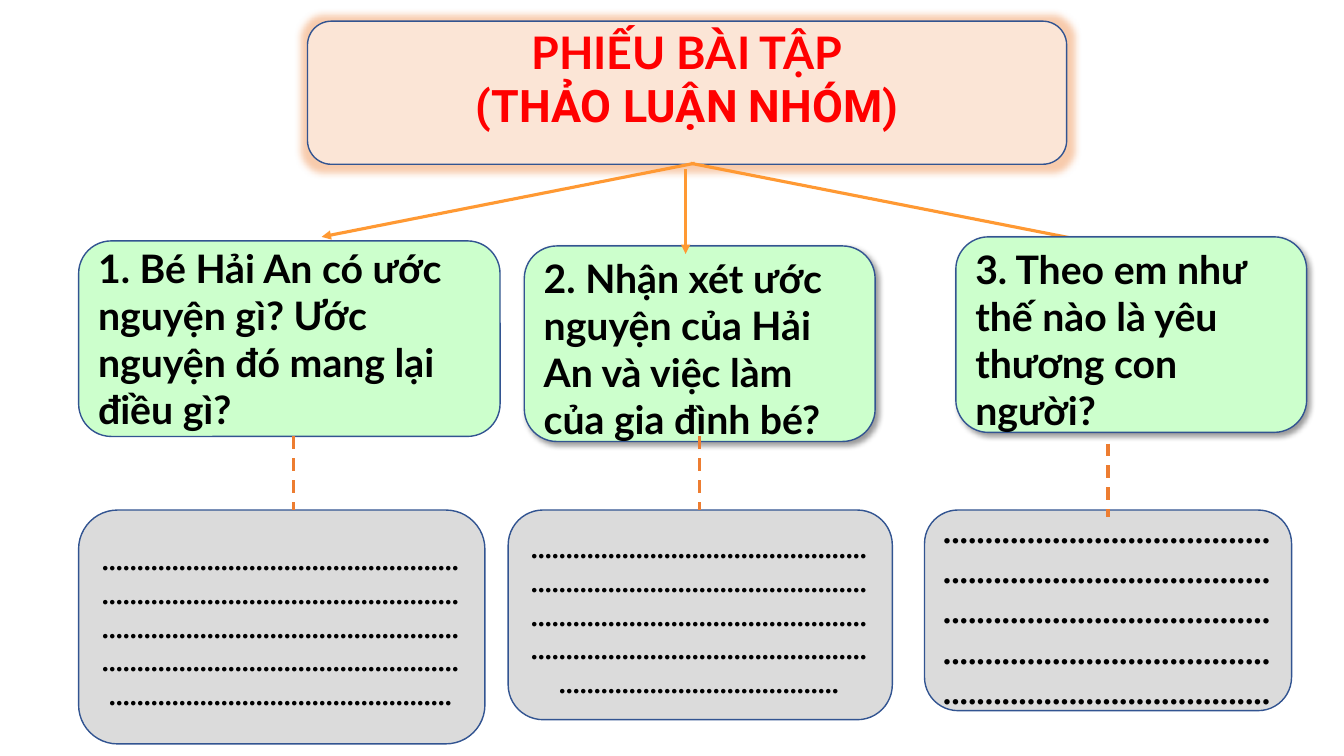
from lxml.etree import SubElement
from pptx import Presentation
from pptx.dml.color import RGBColor
from pptx.enum.dml import MSO_LINE
from pptx.enum.shapes import MSO_CONNECTOR, MSO_SHAPE
from pptx.enum.text import MSO_ANCHOR, MSO_AUTO_SIZE, PP_ALIGN
from pptx.oxml.ns import qn
from pptx.util import Inches, Pt

BORDER, GREEN, GRAY, PEACH = "325491", "CCFFCC", "DBDBDB", "FBE5D6"
ARROW, DASH, RED, BLACK = "FF9933", "ED7D31", "FF0000", "000000"

HEADING = (3.05, 0.21, 7.53, 1.42)
# left, top, width, height, top inset, bottom inset, has shadow, text
QUESTIONS = [
    (0.78, 2.39, 4.18, 1.94, 0.05, 0.05, False,
     "1. Bé Hải An có ước nguyện gì? Ước nguyện đó mang lại điều gì?"),
    (5.2, 2.44, 3.48, 1.94, 0.09, 0, True,
     "2. Nhận xét ước nguyện của Hải An và việc làm của gia đình bé?"),
    (9.48, 2.35, 3.48, 1.94, 0.09, 0, True,
     "3. Theo em như thế nào là yêu thương con người?"),
]
# left, width, height, side inset, number of dots, text size
ANSWERS = [(0.78, 4.03, 2.32, 0.1, 253, 20),
           (5.04, 3.81, 2.08, 0.11, 232, 20),
           (9.17, 3.64, 1.99, 0.08, 195, 24)]
ARROWS = [(6.85, 1.62, 10.92, 2.42),
          (6.89, 1.62, 3.19, 2.35),
          (6.8, 1.68, 6.8, 2.52)]
DASHES = [(2.91, 4.33), (6.94, 4.33), (10.99, 4.4)]


def rgb(value):
    return RGBColor.from_string(value)


def add_effect(sp, kind, color, alpha, **attrs):
    effects = sp._element.spPr.find(qn("a:effectLst"))
    effect = SubElement(effects, qn("a:" + kind), **attrs)
    clr = SubElement(effect, qn("a:srgbClr"), val=color)
    SubElement(clr, qn("a:alpha"), val=str(alpha * 1000))


def set_frame(tf, top=0.05, bottom=0.05, side=0.1):
    tf.word_wrap = True
    tf.auto_size = MSO_AUTO_SIZE.NONE
    tf.vertical_anchor = MSO_ANCHOR.MIDDLE
    tf.margin_top, tf.margin_bottom = Inches(top), Inches(bottom)
    tf.margin_left = tf.margin_right = Inches(side)


def add_text(p, text, size, font, color, align, italic=False):
    p.alignment = align
    p.line_spacing = 1.0
    r = p.add_run()
    r.text = text
    r.font.size, r.font.name = Pt(size), font
    r.font.bold, r.font.italic = True, italic
    r.font.color.rgb = rgb(color)


def add_box(s, left, top, width, height, fill):
    sp = s.shapes.add_shape(MSO_SHAPE.ROUNDED_RECTANGLE, Inches(left), Inches(top),
                            Inches(width), Inches(height))
    sp.fill.solid()
    sp.fill.fore_color.rgb = rgb(fill)
    sp.line.color.rgb = rgb(BORDER)
    sp.line.width = Pt(1)
    sp.shadow.inherit = False
    return sp


def add_heading(s):
    box = add_box(s, *HEADING, PEACH)
    add_effect(box, "glow", DASH, 40, rad=str(Inches(0.14)))
    title = s.shapes.title
    title.left, title.top, title.width, title.height = map(Inches, HEADING)
    # Bring the title text in front of its box
    box._element.addnext(title._element)
    tf = title.text_frame
    set_frame(tf, bottom=0.34)
    add_text(tf.paragraphs[0], "PHIẾU BÀI TẬP", 32, "Lato", RED, PP_ALIGN.CENTER)
    add_text(tf.add_paragraph(), "(THẢO LUẬN NHÓM)", 32, "Roboto", RED, PP_ALIGN.CENTER)


def add_question(s, left, top, width, height, inset_top, inset_bottom, shadow, text):
    sp = add_box(s, left, top, width, height, GREEN)
    set_frame(sp.text_frame, inset_top, inset_bottom)
    if shadow:
        add_effect(sp, "outerShdw", BLACK, 40, blurRad=str(Pt(4)), dist=str(Pt(3)),
                   dir="2700000", algn="tl", rotWithShape="0")
    add_text(sp.text_frame.paragraphs[0], text, 28, "Lato", BLACK, PP_ALIGN.LEFT)


def add_answer(s, left, width, height, side, dots, size):
    sp = add_box(s, left, 5.06, width, height, GRAY)
    set_frame(sp.text_frame, side=side)
    add_text(sp.text_frame.paragraphs[0], "." * dots, size, "Times New Roman",
             BLACK, PP_ALIGN.CENTER, italic=True)


def add_line(s, x1, y1, x2, y2, color, dashed=False):
    line = s.shapes.add_connector(MSO_CONNECTOR.STRAIGHT, Inches(x1), Inches(y1),
                                  Inches(x2), Inches(y2))
    line.line.color.rgb = rgb(color)
    line.line.width = Pt(2.25)
    if dashed:
        line.line.dash_style = MSO_LINE.DASH
    else:
        SubElement(line.line._get_or_add_ln(), qn("a:tailEnd"), type="triangle")
    SubElement(line._element.spPr, qn("a:effectLst"))


def main():
    prs = Presentation()
    prs.slide_width, prs.slide_height = Inches(13.33), Inches(7.5)
    s = prs.slides.add_slide(prs.slide_layouts[5])

    # Heading
    add_heading(s)

    # Questions and answer boxes
    for question in QUESTIONS[:2]:
        add_question(s, *question)
    for answer in ANSWERS:
        add_answer(s, *answer)

    # Arrows from the heading, dashes down to the answers
    for arrow in ARROWS:
        add_line(s, *arrow, ARROW)
    for x, y in DASHES:
        add_line(s, x, y, x, y + 0.73, DASH, dashed=True)

    # The third question covers the tip of its arrow
    add_question(s, *QUESTIONS[2])

    prs.save("out.pptx")


if __name__ == "__main__":
    main()
